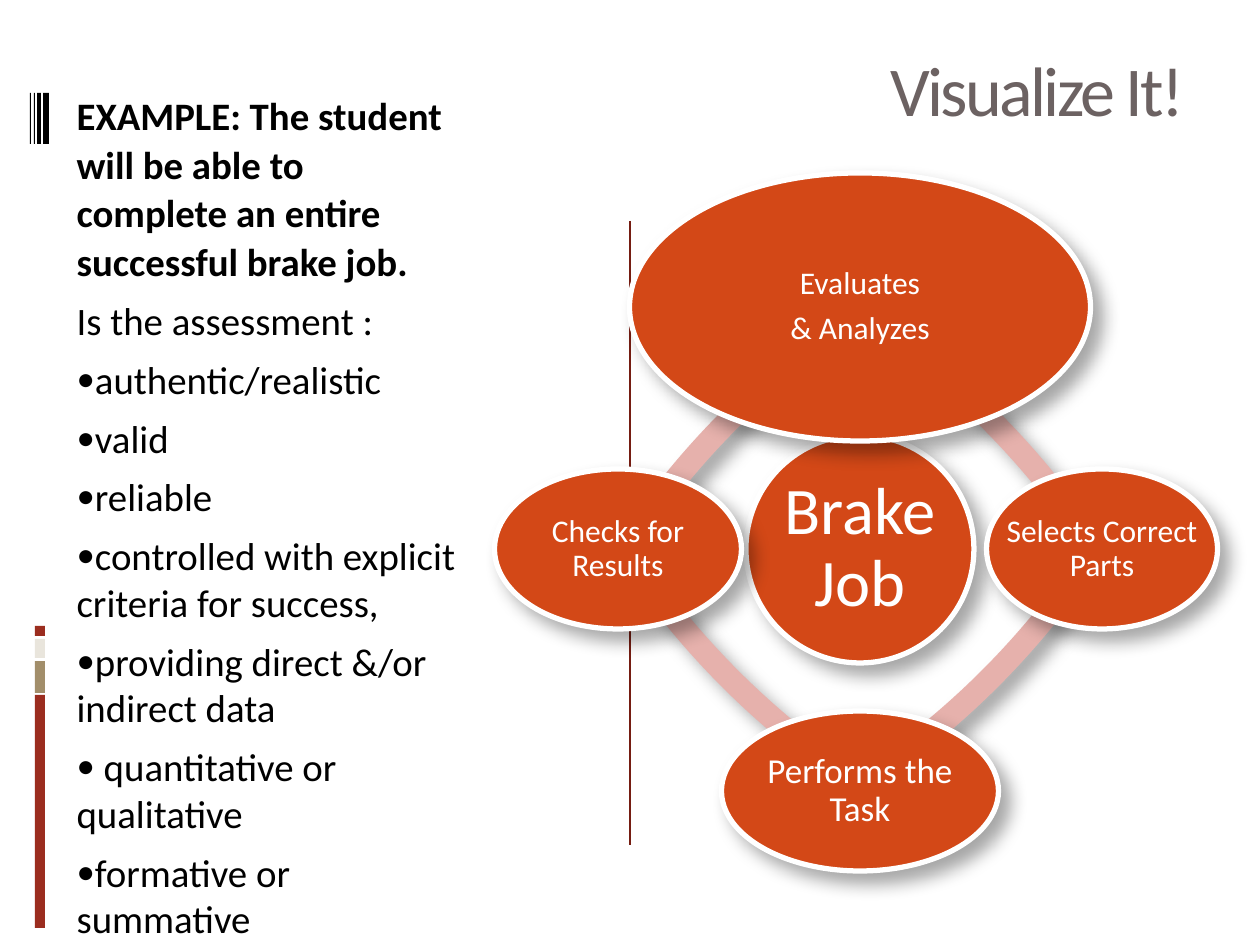
from dataclasses import dataclass

from lxml.etree import SubElement
from pptx import Presentation
from pptx.dml.color import RGBColor
from pptx.enum.shapes import MSO_CONNECTOR, MSO_SHAPE
from pptx.enum.text import MSO_ANCHOR, MSO_AUTO_SIZE, PP_ALIGN
from pptx.oxml.ns import qn
from pptx.util import Emu, Pt


@dataclass(frozen=True)
class Theme:
    font: str = "Calibri"
    title: str = "6C6262"
    ink: str = "000000"
    paper: str = "FFFFFF"
    rust: str = "9B2D1F"
    khaki: str = "A28E6A"
    sand: str = "E9E5DC"
    divider: str = "751D12"
    node: str = "D34817"
    arc: str = "E6B1AC"
    title_size: float = 40
    body_size: float = 22.2
    hub_size: float = 38
    node_size: float = 18
    task_size: float = 20


THEME = Theme()

# Cycle geometry in px
HUB_X, HUB_Y, HUB_DIAMETER = 860, 549, 228
NODE_DISTANCE = 242
ARC_OFFSET, ARC_RADIUS = 444, 823
ARC_START, ARC_SWEEP = 32.9, 24.2

# Direction from the hub, width, height, text inset, type size, lines
NODES = [
    (0, -1, 461, 268, 18, THEME.node_size, ["Evaluates", "& Analyzes"]),
    (1, 0, 231, 160, 18, THEME.node_size, ["Selects Correct Parts"]),
    (0, 1, 277, 160, 20, THEME.task_size, ["Performs the Task"]),
    (-1, 0, 247, 160, 18, THEME.node_size, ["Checks for Results"]),
]

# Left, top, width, height, colour
BARS = [
    (35, 695, 10, 233, THEME.rust),
    (35, 661, 10, 32, THEME.khaki),
    (35, 639, 10, 19, THEME.sand),
    (35, 626, 10, 10, THEME.rust),
] + [(left, 93, width, 51, THEME.ink)
     for left, width in ((43, 6), (37, 4), (34, 1), (30, 1))]

GOAL = "EXAMPLE: The student will be able to complete an entire successful brake job."
QUESTION = "Is the assessment :"
CRITERIA = [
    "authentic/realistic",
    "valid",
    "reliable",
    "controlled with explicit criteria for success,",
    "providing direct &/or indirect data",
    " quantitative or qualitative",
    "formative or summative",
]


def px(length):
    return Emu(round(length * 914400 / 126))


def box(left, top, width, height):
    return px(left), px(top), px(width), px(height)


def centred_box(x, y, width, height):
    return box(x - width / 2, y - height / 2, width, height)


def add_run(paragraph, text, size, colour, bold=False):
    run = paragraph.add_run()
    run.text = text
    run.font.name = THEME.font
    run.font.size = Pt(size)
    run.font.bold = bold
    run.font.color.rgb = RGBColor.from_string(colour)
    return run


def add_filled(shapes, preset, bounds, colour):
    shape = shapes.add_shape(preset, *bounds)
    shape.fill.solid()
    shape.fill.fore_color.rgb = RGBColor.from_string(colour)
    shape.line.fill.background()
    shape.shadow.inherit = False
    return shape


def add_shadow(shape):
    effects = shape._element.spPr.find(qn("a:effectLst"))
    shadow = SubElement(effects, qn("a:outerShdw"), blurRad=str(Pt(10.2)),
                        dist=str(Pt(8)), dir=str(45 * 60000),
                        algn="ctr", rotWithShape="0")
    colour = SubElement(shadow, qn("a:srgbClr"), val=THEME.ink)
    SubElement(colour, qn("a:alpha"), val="35000")


def add_divider(shapes):
    divider = shapes.add_connector(MSO_CONNECTOR.STRAIGHT,
                                   px(630), px(221), px(630), px(845))
    divider.line.color.rgb = RGBColor.from_string(THEME.divider)
    divider.line.width = Pt(0.75)
    SubElement(divider._element.spPr, qn("a:effectLst"))


def place(placeholder, bounds, anchor):
    placeholder.left, placeholder.top, placeholder.width, placeholder.height = bounds
    frame = placeholder.text_frame
    frame.word_wrap = True
    frame.auto_size = MSO_AUTO_SIZE.NONE
    frame.vertical_anchor = anchor
    return frame


def fill_title(title):
    frame = place(title, box(63, 29, 1134, 118), MSO_ANCHOR.MIDDLE)
    paragraph = frame.paragraphs[0]
    paragraph.alignment = PP_ALIGN.RIGHT
    run = add_run(paragraph, "Visualize It!", THEME.title_size, THEME.title)
    run.font._element.set("spc", "-150")


def set_bullet(paragraph, bulleted):
    properties = paragraph._p.get_or_add_pPr()
    properties.set("marL", "0")
    properties.set("indent", "0")
    if bulleted:
        SubElement(properties, qn("a:buSzPct"), val="95000")
        SubElement(properties, qn("a:buFont"), typeface=THEME.font)
        SubElement(properties, qn("a:buChar"), char="•")
    else:
        SubElement(properties, qn("a:buNone"))


def fill_body(body):
    frame = place(body, box(64, 84, 408, 819), MSO_ANCHOR.TOP)
    for index, text in enumerate([GOAL, QUESTION] + CRITERIA):
        paragraph = frame.paragraphs[0] if index == 0 else frame.add_paragraph()
        paragraph.alignment = PP_ALIGN.LEFT
        paragraph.line_spacing = 1.04 if text == GOAL else 1.0
        paragraph.space_before = Pt(7)
        set_bullet(paragraph, text in CRITERIA)
        add_run(paragraph, text, THEME.body_size, THEME.ink, bold=text == GOAL)


def add_arc(shapes, quarter, side_x, side_y):
    bounds = centred_box(HUB_X + side_x * ARC_OFFSET, HUB_Y + side_y * ARC_OFFSET,
                         2 * ARC_RADIUS, 2 * ARC_RADIUS)
    arc = add_filled(shapes, MSO_SHAPE.BLOCK_ARC, bounds, THEME.arc)
    start = ARC_START + 90 * quarter
    # Angles are stored in 60000ths of a degree, adjustments in 100000ths
    arc.adjustments[0] = start * 0.6
    arc.adjustments[1] = (start + ARC_SWEEP) * 0.6
    arc.adjustments[2] = 0.014
    add_shadow(arc)


def add_node(shapes, bounds, inset, size, lines):
    oval = add_filled(shapes, MSO_SHAPE.OVAL, bounds, THEME.node)
    oval.line.color.rgb = RGBColor.from_string(THEME.paper)
    oval.line.width = Pt(3)
    add_shadow(oval)
    # The label uses the oval's full width, wider than its own text area
    frame = shapes.add_textbox(*bounds).text_frame
    frame.word_wrap = True
    frame.vertical_anchor = MSO_ANCHOR.MIDDLE
    frame.margin_left = frame.margin_right = px(inset)
    frame.margin_top = frame.margin_bottom = px(inset)
    for index, text in enumerate(lines):
        paragraph = frame.paragraphs[0] if index == 0 else frame.add_paragraph()
        paragraph.alignment = PP_ALIGN.CENTER
        paragraph.line_spacing = 0.9
        paragraph.space_after = Pt(0.35 * size)
        add_run(paragraph, text, size, THEME.paper)


def add_cycle(shapes):
    for quarter, side_x, side_y in ((2, 1, 1), (1, 1, -1), (0, -1, -1), (3, -1, 1)):
        add_arc(shapes, quarter, side_x, side_y)
    add_node(shapes, centred_box(HUB_X, HUB_Y, HUB_DIAMETER, HUB_DIAMETER),
             0, THEME.hub_size, ["Brake Job"])
    for step_x, step_y, width, height, inset, size, lines in NODES:
        bounds = centred_box(HUB_X + step_x * NODE_DISTANCE,
                             HUB_Y + step_y * NODE_DISTANCE, width, height)
        add_node(shapes, bounds, inset, size, lines)


def main():
    deck = Presentation()
    deck.slide_width, deck.slide_height = px(1260), px(945)
    slide = deck.slides.add_slide(deck.slide_layouts[1])

    # Side decoration and divider
    for *bounds, colour in BARS:
        add_filled(slide.shapes, MSO_SHAPE.RECTANGLE, box(*bounds), colour)
    add_divider(slide.shapes)

    # Title and checklist
    fill_title(slide.shapes.title)
    fill_body(slide.placeholders[1])

    # Brake job cycle
    add_cycle(slide.shapes.add_group_shape().shapes)
    deck.save("out.pptx")


if __name__ == "__main__":
    main()
